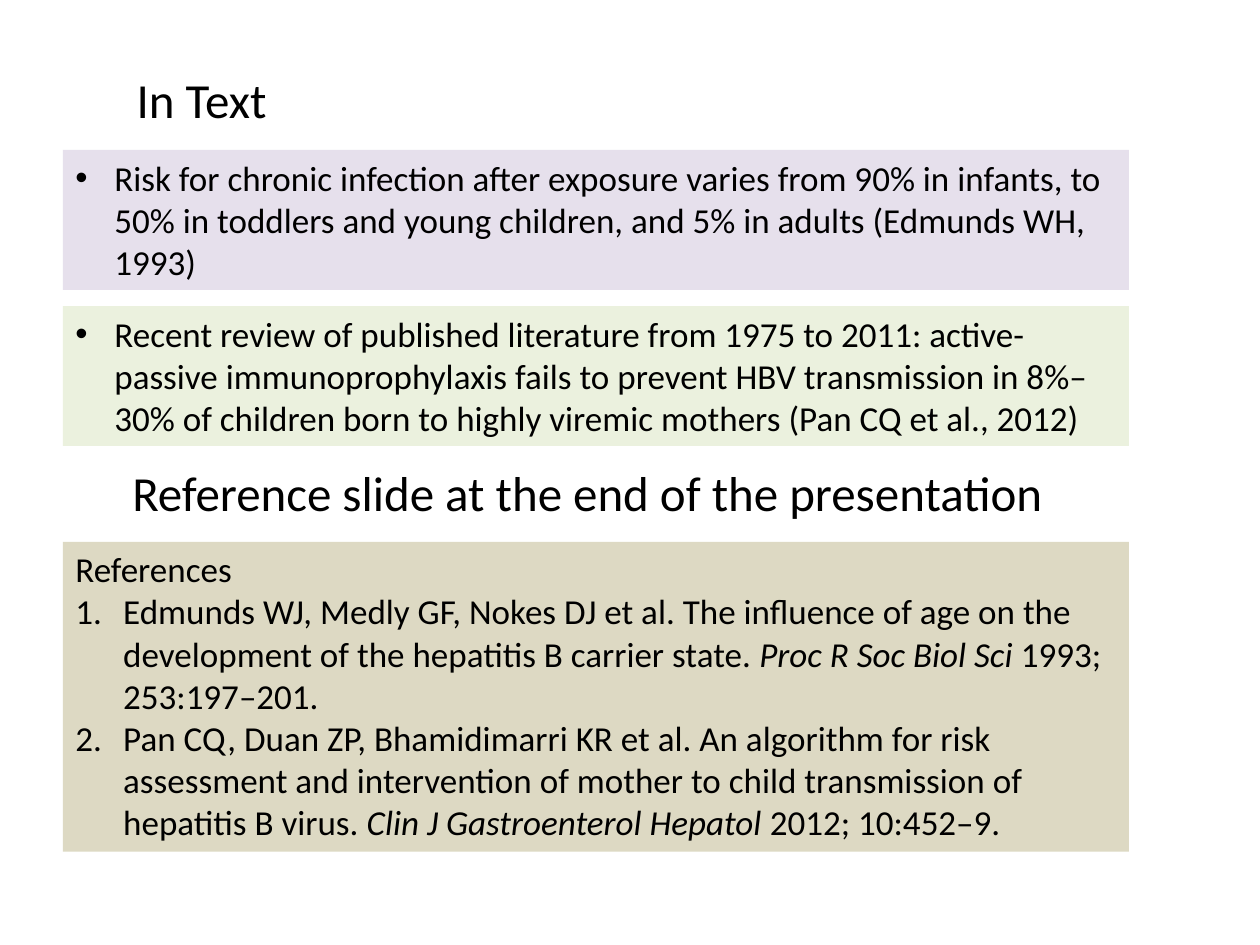
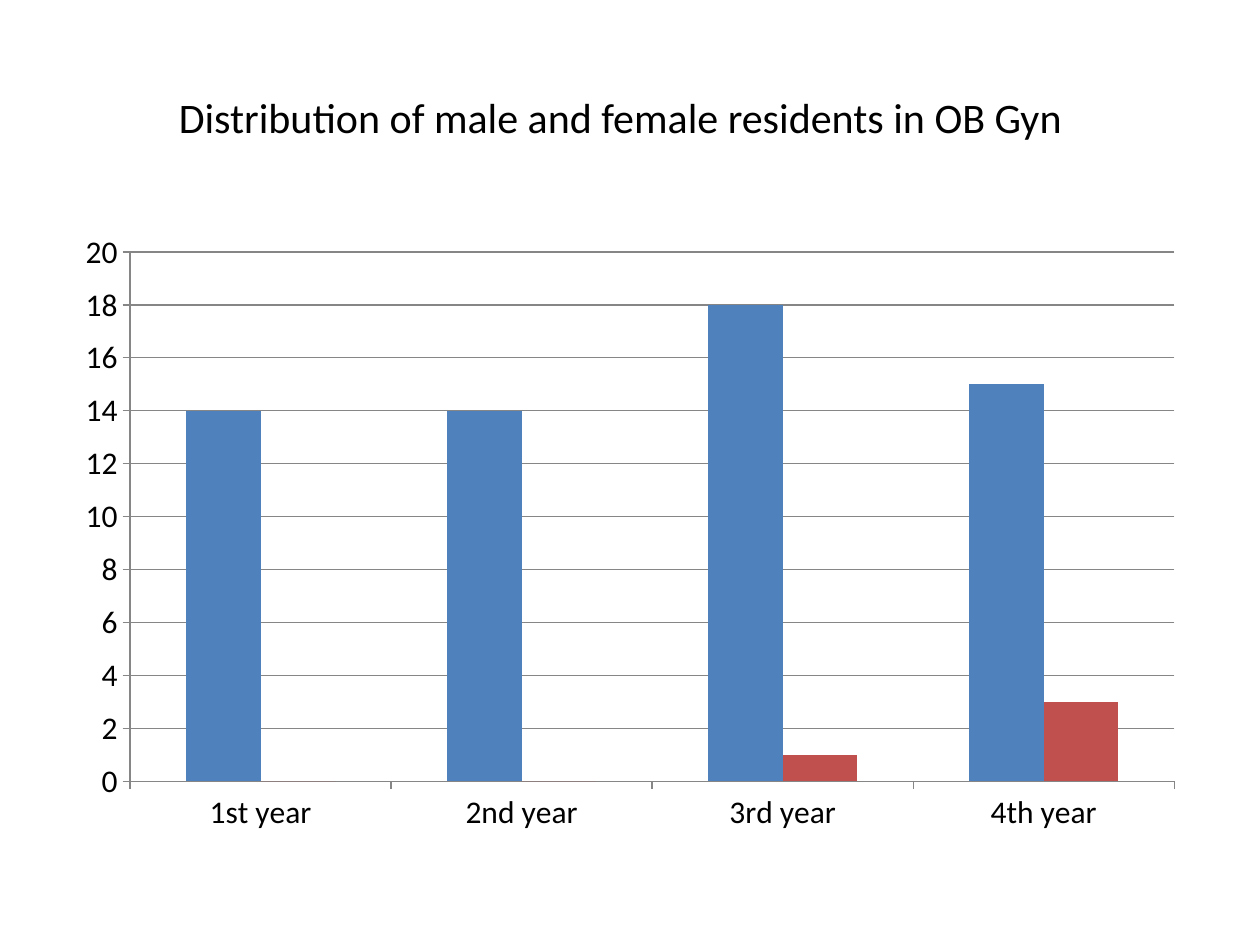
from dataclasses import dataclass

from lxml.etree import SubElement as Sub
from pptx import Presentation
from pptx.chart.data import CategoryChartData as Data
from pptx.dml.color import RGBColor as RGB
from pptx.enum.chart import XL_CHART_TYPE as Kind, XL_TICK_MARK as Tick
from pptx.enum.shapes import MSO_SHAPE as Form
from pptx.enum.text import MSO_ANCHOR as Anchor, MSO_AUTO_SIZE as Fit, PP_ALIGN as Align
from pptx.oxml.ns import qn
from pptx.slide import Slide
from pptx.util import Emu, Inches, Pt

WIDE, HIGH = Inches(10), Inches(7.5)
COLS, ROWS = 100, 75
FONT = "Calibri"
HUES = {
    "ink": "000000", "lilac": "E6E0EC", "green": "EBF1DE", "tan": "DDD9C3",
    "blue": "4F81BD", "red": "C0504D", "grid": "868686",
}
DOT, NUM = "dot", "num"
INDENT = {DOT: Inches(0.31), NUM: Inches(0.38)}


@dataclass(frozen=True)
class Cell:
    """A place on the grid, in columns and rows."""
    col: float
    row: float
    cols: float
    rows: float

    def box(self) -> tuple[Emu, Emu, Emu, Emu]:
        x, y = WIDE / COLS, HIGH / ROWS
        return (Emu(round(self.col * x)), Emu(round(self.row * y)),
                Emu(round(self.cols * x)), Emu(round(self.rows * y)))


@dataclass(frozen=True)
class Head:
    text: str
    cell: Cell
    size: int = 28
    inset: float = 0.1


@dataclass(frozen=True)
class Line:
    """A paragraph; every second phrase of it is italic."""
    phrases: tuple[str, ...]
    mark: str = ""


@dataclass(frozen=True)
class Panel:
    hue: str
    row: float
    rows: float
    lines: tuple[Line, ...]


HEADS = (
    Head("In Text", Cell(1.9, 4.2, 28.2, 7.3)),
    Head("Reference slide at the end of the presentation", Cell(8.9, 35.4, 75.4, 7.3)),
)
PANELS = (
    Panel("lilac", 11.9, 11.1, (Line((
        "Risk for chronic infection after exposure varies from 90% in infants, to 50% in "
        "toddlers and young children, and 5% in adults (Edmunds WH, 1993)",), DOT),)),
    Panel("green", 24.3, 11.1, (Line((
        "Recent review of published literature from 1975 to 2011: active-passive "
        "immunoprophylaxis fails to prevent HBV transmission in 8%–30% of children born "
        "to highly viremic mothers (Pan CQ et al., 2012)",), DOT),)),
    Panel("tan", 43, 24.6, (
        Line(("References",)),
        Line(("Edmunds WJ, Medly GF, Nokes DJ et al. The influence of age on the "
              "development of the hepatitis B carrier state. ",
              "Proc R Soc Biol Sci", " 1993; 253:197–201."), NUM),
        Line(("Pan CQ, Duan ZP, Bhamidimarri KR et al. An algorithm for risk assessment and "
              "intervention of mother to child transmission of hepatitis B virus. ",
              "Clin J Gastroenterol Hepatol", " 2012; 10:452–9."), NUM),
    )),
)
CHART_HEAD = Head("Distribution of male and female residents in OB Gyn",
                  Cell(5, 3, 90, 12.5), 24, 0.25)
YEARS = ("1st year", "2nd year", "3rd year", "4th year")
SERIES = (
    ("Series 1", "blue", (14, 14, 18, 15)),
    ("Series 2", "red", (0, 0, 1, 3)),
)


def paint(hue: str) -> RGB:
    return RGB.from_string(HUES[hue])


def style(font, size: int) -> None:
    font.name, font.size = FONT, Pt(size)
    font.color.rgb = paint("ink")


def add_head(slide: Slide, head: Head) -> None:
    frame = slide.shapes.add_textbox(*head.cell.box()).text_frame
    frame.word_wrap = True
    frame.vertical_anchor = Anchor.MIDDLE
    frame.margin_right = Inches(head.inset)
    frame.text = head.text
    para = frame.paragraphs[0]
    para.alignment = Align.CENTER
    style(para.runs[0].font, head.size)


def add_mark(para, mark: str) -> None:
    """Give a paragraph a hanging bullet or number."""
    props = para._p.get_or_add_pPr()
    props.set("marL", str(INDENT[mark]))
    props.set("indent", str(-INDENT[mark]))
    if mark == DOT:
        Sub(props, qn("a:buFont"), typeface="Arial")
        Sub(props, qn("a:buChar"), char="•")
    else:
        Sub(props, qn("a:buFont"), typeface="+mj-lt")
        Sub(props, qn("a:buAutoNum"), type="arabicPeriod")


def add_panel(slide: Slide, panel: Panel) -> None:
    cell = Cell(5, panel.row, 84.6, panel.rows)
    shape = slide.shapes.add_shape(Form.RECTANGLE, *cell.box())
    shape.shadow.inherit = False
    shape.fill.solid()
    shape.fill.fore_color.rgb = paint(panel.hue)
    shape.line.fill.background()
    frame = shape.text_frame
    frame.word_wrap = True
    frame.auto_size = Fit.SHAPE_TO_FIT_TEXT
    frame.vertical_anchor = Anchor.TOP
    for i, line in enumerate(panel.lines):
        para = frame.add_paragraph() if i else frame.paragraphs[0]
        para.alignment = Align.LEFT
        if line.mark:
            add_mark(para, line.mark)
        for j, phrase in enumerate(line.phrases):
            run = para.add_run()
            run.text = phrase
            style(run.font, 20)
            run.font.italic = j % 2 == 1


def add_bars(slide: Slide, cell: Cell) -> None:
    data = Data()
    data.categories = YEARS
    for name, _, vals in SERIES:
        data.add_series(name, vals)
    chart = slide.shapes.add_chart(Kind.COLUMN_CLUSTERED, *cell.box(), data).chart
    chart.has_legend = chart.has_title = False
    style(chart.font, 18)
    plot = chart.plots[0]
    plot.gap_width, plot.overlap = 150, 0
    plot.vary_by_categories = False
    for bars, (_, hue, _) in zip(plot.series, SERIES):
        bars.format.fill.solid()
        bars.format.fill.fore_color.rgb = paint(hue)
        bars.invert_if_negative = False
    years, count = chart.category_axis, chart.value_axis
    count.minimum_scale, count.maximum_scale, count.major_unit = 0, 20, 2
    count.has_major_gridlines = True
    for axis in (years, count):
        axis.major_tick_mark, axis.minor_tick_mark = Tick.OUTSIDE, Tick.NONE
    for rule in (years, count, count.major_gridlines):
        rule.format.line.color.rgb = paint("grid")
        rule.format.line.width = Pt(0.75)


def main() -> None:
    deck = Presentation()
    deck.slide_width, deck.slide_height = WIDE, HIGH
    blank = deck.slide_layouts[6]
    cite = deck.slides.add_slide(blank)
    for panel in PANELS:
        add_panel(cite, panel)
    for head in HEADS:
        add_head(cite, head)
    graph = deck.slides.add_slide(blank)
    add_head(graph, CHART_HEAD)
    add_bars(graph, Cell(5, 17.5, 90, 49.5))
    deck.save("out.pptx")


if __name__ == "__main__":
    main()
